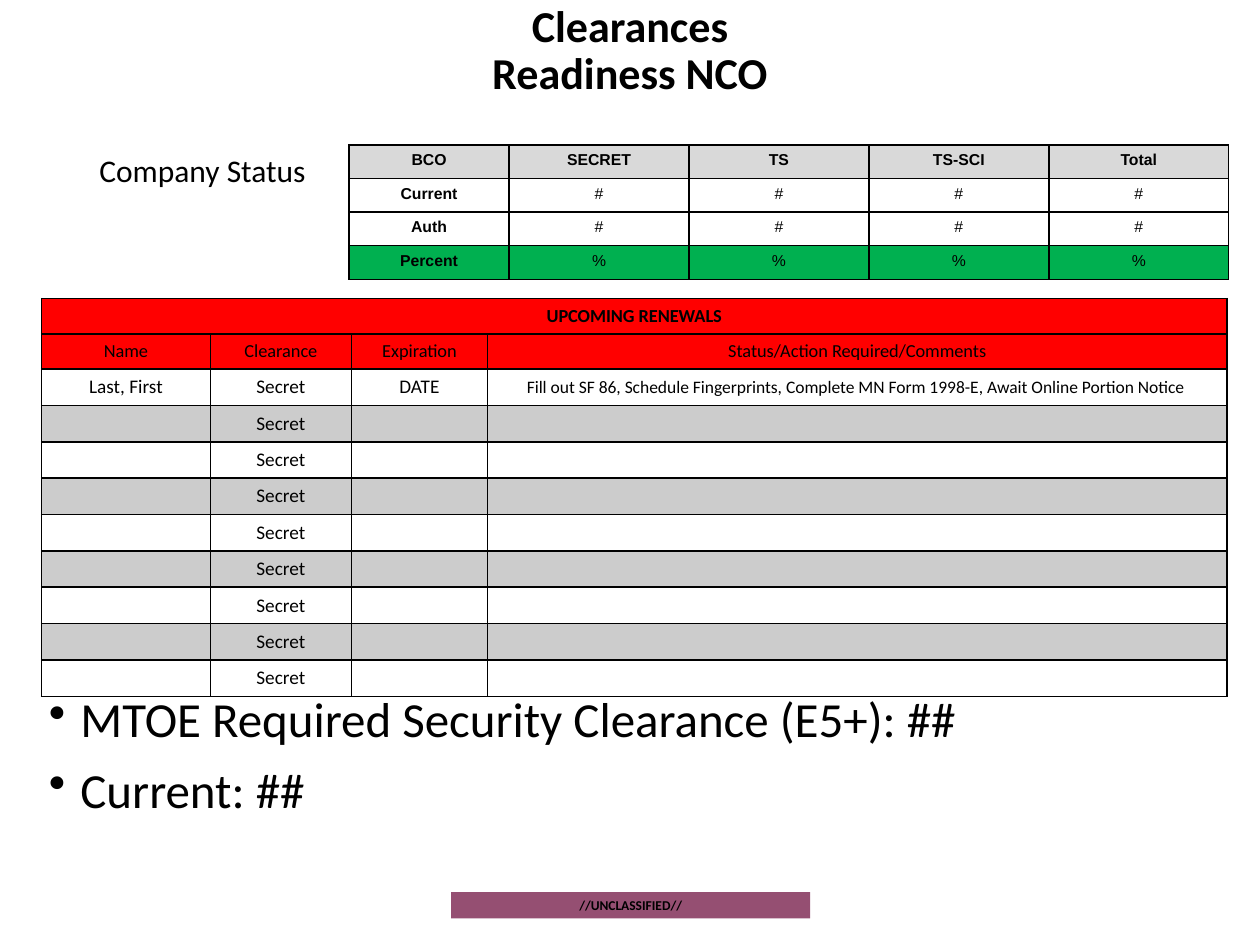
from dataclasses import dataclass
from pptx import Presentation
from pptx.dml.color import RGBColor
from pptx.enum.shapes import MSO_SHAPE
from pptx.enum.text import MSO_ANCHOR, PP_ALIGN
from pptx.oxml import parse_xml
from pptx.oxml.ns import nsdecls
from pptx.util import Inches, Pt


@dataclass(frozen=True)
class Theme:
    sans: str = "Calibri"
    grid: str = "Arial"
    ink: str = "000000"
    white: str = "FFFFFF"
    head: str = "D9D9D9"
    good: str = "00B050"
    alert: str = "FF0000"
    band: str = "CCCCCC"
    mark: str = "954F72"
    title: float = 25.2
    body: float = 28
    label: float = 18
    name: float = 11
    field: float = 10.5
    note: float = 10
    stat: float = 9
    foot: float = 7.7


theme = Theme()
deck = Presentation()
deck.slide_width, deck.slide_height = Inches(10), Inches(7.5)
col, row = deck.slide_width / 100, deck.slide_height / 100
slide = deck.slides.add_slide(deck.slide_layouts[6])
shapes = slide.shapes


def style(para, size, bold=False, face=theme.sans, align=PP_ALIGN.CENTER):
    para.alignment = align
    font = para.font
    font.name, font.size, font.bold = face, Pt(size), bold
    font.color.rgb = RGBColor.from_string(theme.ink)


def table(left, top, cols, rows):
    frame = shapes.add_table(
        len(rows), len(cols), int(left * col), int(top * row),
        int(sum(cols) * col), int(sum(rows) * row))
    grid = frame.table
    grid.first_row = grid.horz_banding = False
    for part, size in zip(grid.columns, cols):
        part.width = int(size * col)
    for part, size in zip(grid.rows, rows):
        part.height = int(size * row)
    for cell in grid.iter_cells():
        for side in "LRTB":
            cell._tc.get_or_add_tcPr().append(parse_xml(
                f'<a:ln{side} {nsdecls("a")} w="12700"><a:solidFill>'
                f'<a:srgbClr val="{theme.ink}"/></a:solidFill></a:ln{side}>'))
    return grid


foot = shapes.add_shape(
    MSO_SHAPE.RECTANGLE, int(35.8 * col), int(94.4 * row), int(28.5 * col), int(2.8 * row))
foot.shadow.inherit = False
foot.fill.solid()
foot.fill.fore_color.rgb = RGBColor.from_string(theme.mark)
foot.line.fill.background()
frame = foot.text_frame
frame.margin_left = frame.margin_right = Inches(0.07)
frame.margin_top = frame.margin_bottom = Inches(0.04)
frame.text = "//UNCLASSIFIED//"
style(frame.paragraphs[0], theme.foot, True)

title = shapes.add_textbox(int(6.9 * col), int(1.2 * row), int(86.2 * col), int(8.53 * row))
frame = title.text_frame
frame.word_wrap = True
frame.vertical_anchor = MSO_ANCHOR.MIDDLE
para = frame.paragraphs[0]
para.add_run().text = "Clearances"
para.add_line_break()
para.add_run().text = "Readiness NCO"
para.line_spacing = 0.9
style(para, theme.title, True)

goals = shapes.add_textbox(int(2.9 * col), int(72.93 * row), int(94.2 * col), int(84.93 * row))
frame = goals.text_frame
frame.word_wrap = True
frame.text = "MTOE Required Security Clearance (E5+): ##\nCurrent: ##"
for para in frame.paragraphs:
    style(para, theme.body, align=PP_ALIGN.LEFT)
    para.line_spacing, para.space_before = 0.9, Pt(10)
    props = para._p.get_or_add_pPr()
    props.set("marL", str(Inches(0.25)))
    props.set("indent", str(-Inches(0.25)))
    props.insert_element_before(
        parse_xml(f'<a:buChar {nsdecls("a")} char="•"/>'), "a:tabLst", "a:defRPr")

fields = ["Name", "Clearance", "Expiration", "Status/Action Required/Comments"]
first = ["Last, First", "Secret", "DATE",
         "Fill out SF 86, Schedule Fingerprints, Complete MN Form 1998-E, Await Online Portion Notice "]
lines = [["UPCOMING RENEWALS", "", "", ""], fields, first] + [["", "Secret", "", ""]] * 8
due = table(3.3, 31.6, [13.4, 11.2, 10.8, 58.7], [3.73] * 2 + [3.85] * 9)
due.cell(0, 0).merge(due.cell(0, 3))
for r, line in enumerate(lines):
    for c, text in enumerate(line):
        cell = due.cell(r, c)
        cell.vertical_anchor = MSO_ANCHOR.MIDDLE
        if r > 1:
            edge = Inches(0.05 if text and text != "DATE" else 0.01)
            cell.margin_left = cell.margin_right = edge
            cell.margin_top = cell.margin_bottom = edge
        cell.text = text
        size = theme.field if r < 2 else theme.note if r == 2 and c == 3 else theme.name
        style(cell.text_frame.paragraphs[0], size, r == 0)
        if not text:
            cell.text_frame.paragraphs[0]._p.append(
                parse_xml(f'<a:endParaRPr {nsdecls("a")} sz="{size * 100:.0f}"/>'))
        cell.fill.solid()
        cell.fill.fore_color.rgb = RGBColor.from_string(
            theme.alert if r < 2 else theme.band if r % 2 else theme.white)

lines = [["BCO", "SECRET", "TS", "TS-SCI", "Total"]]
lines += [[name] + [sign] * 4 for name, sign in [("Current", "#"), ("Auth", "#"), ("Percent", "%")]]
fills = [theme.head, theme.white, theme.white, theme.good]
stats = table(27.7, 15.33, [12.7] + [14.28] * 4, [3.56] * 4)
for r, line in enumerate(lines):
    for c, text in enumerate(line):
        cell = stats.cell(r, c)
        cell.text = text
        style(cell.text_frame.paragraphs[0], theme.stat, r == 0 or c == 0, theme.grid)
        cell.fill.solid()
        cell.fill.fore_color.rgb = RGBColor.from_string(fills[r])

label = shapes.add_textbox(int(6.9 * col), int(15.33 * row), int(25 * col), int(5.33 * row))
frame = label.text_frame
frame.word_wrap = True
frame.text = "Company Status"
style(frame.paragraphs[0], theme.label, align=PP_ALIGN.LEFT)

deck.save("out.pptx")
